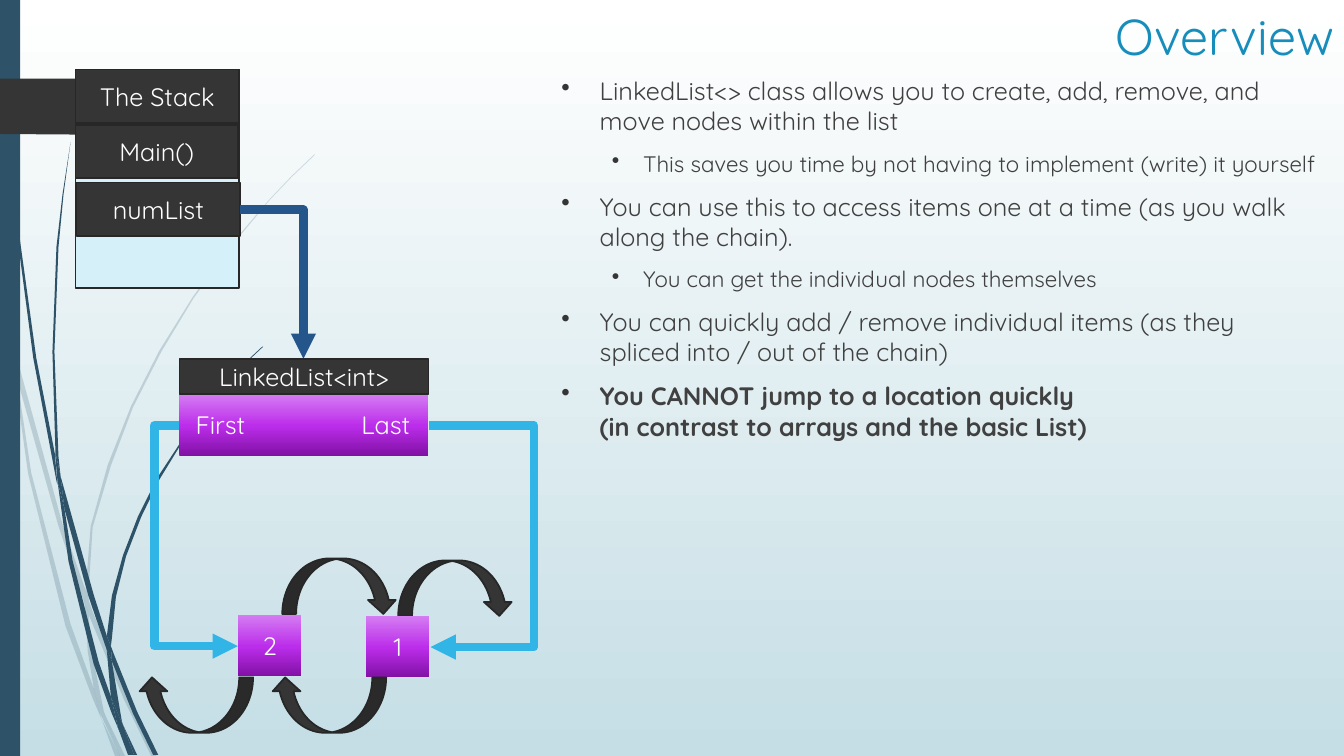
from copy import deepcopy
from dataclasses import dataclass

from lxml import etree
from pptx import Presentation
from pptx import util as u
from pptx.dml.color import RGBColor
from pptx.enum import shapes, text
from pptx.oxml import ns

ROWS, COLUMNS = 750, 1333
CELL = u.Inches(7.5) // ROWS


@dataclass(frozen=True)
class Theme:
    font: str = "Quicksand"
    title_size: int = 36
    main_size: int = 18
    detail_size: int = 16
    title: str = "178DBB"
    body: str = "404040"
    white: str = "FFFFFF"
    dark: str = "353535"
    outline: str = "272727"
    pale: str = "D6F0FA"
    slate: str = "2E5369"
    sky: str = "31B4E6"
    navy: str = "24558B"
    outline_width: float = 1.25
    arrow_width: float = 6
    backdrop: tuple = ((0, "FFFFFF"), (1, "C5DEE5"))
    purple: tuple = ((0, "8111A5"), (0.48, "BB2DEA"), (1, "D57DF2"))


@dataclass(frozen=True)
class Box:
    column: float
    row: float
    columns: float
    rows: float
    label: str = ""
    fill: str | tuple = ""
    outlined: bool = True


@dataclass(frozen=True)
class CurvedArrow:
    column: float
    row: float
    rotation: int = 0


@dataclass(frozen=True)
class Elbow:
    start: tuple
    end: tuple
    color: str
    bend: float | None = None


@dataclass(frozen=True)
class Bullet:
    lines: tuple
    level: int = 0
    bold: bool = False


THEME = Theme()

PALE_WISPS = (
    ((11, 350), (9, 322), (0, 282), (0, 299), (10, 344)),
    ((58, 522), (84, 599), (85, 586), (62, 520), (14, 345), (17, 376)),
    ((92, 607), (88, 596), (88, 610), (123, 694), (150, 750), (155, 750), (127, 692)),
    ((119, 750), (124, 750), (105, 711)),
    ((93, 683), (70, 619), (31, 469), (17, 376), (11, 350), (28, 470), (65, 621), (92, 693), (101, 714), (99, 707)),
    ((84, 599), (87, 646), (93, 683), (96, 692), (105, 711), (103, 706), (91, 646), (88, 610), (88, 608)),
    ((88, 584), (92, 523), (110, 462), (132, 404), (160, 349), (192, 296), (229, 245), (268, 198), (290, 175),
     (312, 154), (312, 153), (289, 175), (268, 197), (228, 244), (191, 295), (158, 348), (130, 403), (107, 461),
     (90, 522), (85, 584), (85, 586), (88, 596)),
    ((101, 714), (114, 750), (119, 750)),
    ((88, 608), (88, 596), (85, 586), (84, 599)),
    ((96, 692), (93, 683), (99, 707), (119, 750), (105, 711)),
)
DARK_WISPS = (
    ((7, 110), (17, 233), (33, 355), (56, 477), (57, 481), (55, 457), (55, 453), (36, 355), (19, 232), (8, 109),
     (5, 48), (4, 0), (3, 0), (4, 48)),
    ((88, 592), (106, 645), (106, 631), (93, 590), (60, 472), (64, 505)),
    ((113, 649), (110, 641), (111, 656), (132, 708), (152, 749), (157, 749), (136, 706)),
    ((110, 691), (98, 657), (72, 556), (64, 505), (57, 477), (68, 557), (93, 659), (111, 708), (117, 722), (116, 717)),
    ((60, 472), (58, 453), (54, 349), (58, 245), (63, 193), (70, 141), (62, 193), (56, 245), (52, 349), (55, 449)),
    ((133, 749), (136, 749), (122, 719)),
    ((57, 477), (64, 505), (60, 472), (55, 449), (55, 453)),
    ((111, 633), (115, 592), (125, 552), (140, 513), (158, 476), (180, 440), (205, 406), (231, 374), (245, 359),
     (261, 344), (260, 344), (245, 358), (231, 373), (204, 405), (179, 439), (156, 474), (137, 512), (122, 551),
     (111, 591), (106, 631), (110, 641)),
    ((117, 722), (127, 749), (131, 749)),
    ((106, 645), (110, 691), (116, 706), (122, 719), (121, 716), (111, 656), (109, 651)),
    ((106, 645), (109, 651), (111, 656), (110, 641), (106, 631)),
    ((116, 706), (110, 691), (116, 717), (117, 722), (130, 749), (133, 749), (122, 719)),
)
TAG = ((173, 108), (148, 133), (146, 134), (136, 134), (0, 133), (0, 78), (146, 78), (148, 79), (173, 104))

STACK = (
    Box(75, 69, 162, 217, fill=THEME.pale),
    Box(75, 69, 162, 53, "The Stack", THEME.dark),
    Box(75, 124, 161, 53, "Main()", THEME.dark),
    Box(76, 181, 162, 53, "numList", THEME.dark),
)
LIST_PARTS = (
    CurvedArrow(137, 672, 180),
    Box(236, 610, 63, 61, "2", THEME.purple, False),
    CurvedArrow(280, 554),
    Box(178, 391, 247, 61, "First\tLast", THEME.purple, False),
    Box(178, 356, 247, 35, "LinkedList<int>", THEME.dark),
    CurvedArrow(395, 556),
    Box(363, 611, 63, 61, "1", THEME.purple, False),
    CurvedArrow(269, 672, 180),
)
LAST_LINK = Elbow((425, 422), (427, 642), THEME.sky, 529)
STACK_LINK = Elbow((238, 208), (301, 356), THEME.navy)
FIRST_LINK = Elbow((178, 422), (236, 641), THEME.sky, 153)

BULLETS = (
    Bullet(("LinkedList<> class allows you to create, add, remove, and move nodes within the list",)),
    Bullet(("This saves you time by not having to implement (write) it yourself",), 1),
    Bullet(("You can use this to access items one at a time (as you walk along the chain).",)),
    Bullet(("You can get the individual nodes themselves",), 1),
    Bullet(("You can quickly add / remove individual items (as they spliced into / out of the chain)",)),
    Bullet(("You CANNOT jump to a location quickly", "(in contrast to arrays and the basic List)"), bold=True),
)


def cells(*counts: float) -> list:
    return [u.Emu(round(count * CELL)) for count in counts]


def add_run(paragraph, wording: str, size: float, color: str, bold: bool = False) -> None:
    run = paragraph.add_run()
    run.text = wording
    run.font.name, run.font.size, run.font.bold = THEME.font, u.Pt(size), bold
    run.font.color.rgb = RGBColor.from_string(color)


def paint_gradient(fill, element, stops: tuple, angle: int) -> None:
    fill.gradient()
    fill.gradient_angle = angle
    stop_list = element.find(".//" + ns.qn("a:gsLst"))
    for extra in range(len(stops) - len(stop_list)):
        stop_list.append(deepcopy(stop_list[0]))
    for stop, (position, color) in zip(fill.gradient_stops, stops):
        stop.position = position
        stop.color.rgb = RGBColor.from_string(color)


def style_shape(shape, fill: str | tuple, outlined: bool = False) -> None:
    shape.shadow.inherit = False
    if isinstance(fill, tuple):
        paint_gradient(shape.fill, shape.element, fill, 90)
    else:
        shape.fill.solid()
        shape.fill.fore_color.rgb = RGBColor.from_string(fill)
    if outlined:
        shape.line.color.rgb = RGBColor.from_string(THEME.outline)
        shape.line.width = u.Pt(THEME.outline_width)
    else:
        shape.line.fill.background()


def add_outline(slide, points: tuple, color: str, opacity: int = 100) -> None:
    builder = slide.shapes.build_freeform(*points[0], scale=CELL)
    builder.add_line_segments(points[1:], close=True)
    shape = builder.convert_to_shape()
    style_shape(shape, color)
    if opacity < 100:
        tint = shape.element.spPr.find(".//" + ns.qn("a:srgbClr"))
        etree.SubElement(tint, ns.qn("a:alpha"), val=str(opacity * 1000))


def add_box(slide, box: Box) -> None:
    kind = shapes.MSO_SHAPE.RECTANGLE
    shape = slide.shapes.add_shape(kind, *cells(box.column, box.row, box.columns, box.rows))
    style_shape(shape, box.fill, box.outlined)
    if not box.label:
        return
    frame = shape.text_frame
    frame.word_wrap, frame.vertical_anchor = True, text.MSO_ANCHOR.MIDDLE
    paragraph = frame.paragraphs[0]
    paragraph.alignment = text.PP_ALIGN.CENTER
    if "\t" in box.label:
        paragraph.alignment = text.PP_ALIGN.LEFT
        frame.margin_left, tab = cells(16, 213)
        tabs = etree.SubElement(paragraph._p.get_or_add_pPr(), ns.qn("a:tabLst"))
        etree.SubElement(tabs, ns.qn("a:tab"), pos=str(int(tab)), algn="r")
    add_run(paragraph, box.label, THEME.main_size, THEME.white)


def add_curved_arrow(slide, arrow: CurvedArrow) -> None:
    kind = shapes.MSO_SHAPE.CURVED_DOWN_ARROW
    shape = slide.shapes.add_shape(kind, *cells(arrow.column, arrow.row, 114, 55))
    shape.rotation = arrow.rotation
    style_shape(shape, THEME.dark, True)


def add_elbow(slide, elbow: Elbow) -> None:
    connector = slide.shapes.add_connector(shapes.MSO_CONNECTOR.ELBOW, *cells(*elbow.start, *elbow.end))
    connector.line.color.rgb = RGBColor.from_string(elbow.color)
    connector.line.width = u.Pt(THEME.arrow_width)
    properties = connector.element.spPr
    geometry = properties.find(ns.qn("a:prstGeom"))
    if elbow.bend is None:
        geometry.set("prst", "bentConnector2")
    else:
        share = (elbow.bend - elbow.start[0]) / (elbow.end[0] - elbow.start[0])
        guides = geometry.find(ns.qn("a:avLst"))
        etree.SubElement(guides, ns.qn("a:gd"), name="adj1", fmla=f"val {round(share * 100000)}")
    etree.SubElement(properties.find(ns.qn("a:ln")), ns.qn("a:tailEnd"), type="triangle")
    etree.SubElement(properties, ns.qn("a:effectLst"))


def add_text_frame(slide, column: float, row: float, columns: float, rows: float):
    frame = slide.shapes.add_textbox(*cells(column, row, columns, rows)).text_frame
    frame.word_wrap = True
    return frame


def add_bullet(paragraph, bullet: Bullet) -> None:
    paragraph.level, paragraph.space_before = bullet.level, u.Pt(10)
    margin, hanging = cells(*((38, -38), (81, -31))[bullet.level])
    properties = paragraph._p.get_or_add_pPr()
    properties.set("marL", str(int(margin)))
    properties.set("indent", str(int(hanging)))
    color = etree.SubElement(properties, ns.qn("a:buClr"))
    etree.SubElement(color, ns.qn("a:srgbClr"), val=THEME.dark)
    etree.SubElement(properties, ns.qn("a:buChar"), char="•")
    size = THEME.detail_size if bullet.level else THEME.main_size
    for index, line in enumerate(bullet.lines):
        if index:
            paragraph.add_line_break()
        add_run(paragraph, line, size, THEME.body, bullet.bold)


def main() -> None:
    presentation = Presentation()
    presentation.slide_width, presentation.slide_height = u.Inches(13.33), u.Inches(7.5)
    slide = presentation.slides.add_slide(presentation.slide_layouts[6])
    paint_gradient(slide.background.fill, slide.element, THEME.backdrop, 270)
    for wisp in PALE_WISPS:
        add_outline(slide, wisp, THEME.slate, 20)
    for wisp in DARK_WISPS:
        add_outline(slide, wisp, THEME.slate)
    add_box(slide, Box(0, 0, 20, ROWS, fill=THEME.slate, outlined=False))
    add_outline(slide, TAG, THEME.dark)
    add_elbow(slide, LAST_LINK)
    title = add_text_frame(slide, 358, 0, COLUMNS - 358, 84).paragraphs[0]
    title.alignment = text.PP_ALIGN.RIGHT
    add_run(title, "Overview", THEME.title_size, THEME.title)
    body = add_text_frame(slide, 547, 70, 773, 490)
    for index, bullet in enumerate(BULLETS):
        add_bullet(body.add_paragraph() if index else body.paragraphs[0], bullet)
    for box in STACK:
        add_box(slide, box)
    add_elbow(slide, STACK_LINK)
    for part in LIST_PARTS:
        (add_box if isinstance(part, Box) else add_curved_arrow)(slide, part)
    add_elbow(slide, FIRST_LINK)
    presentation.save("out.pptx")


if __name__ == "__main__":
    main()
